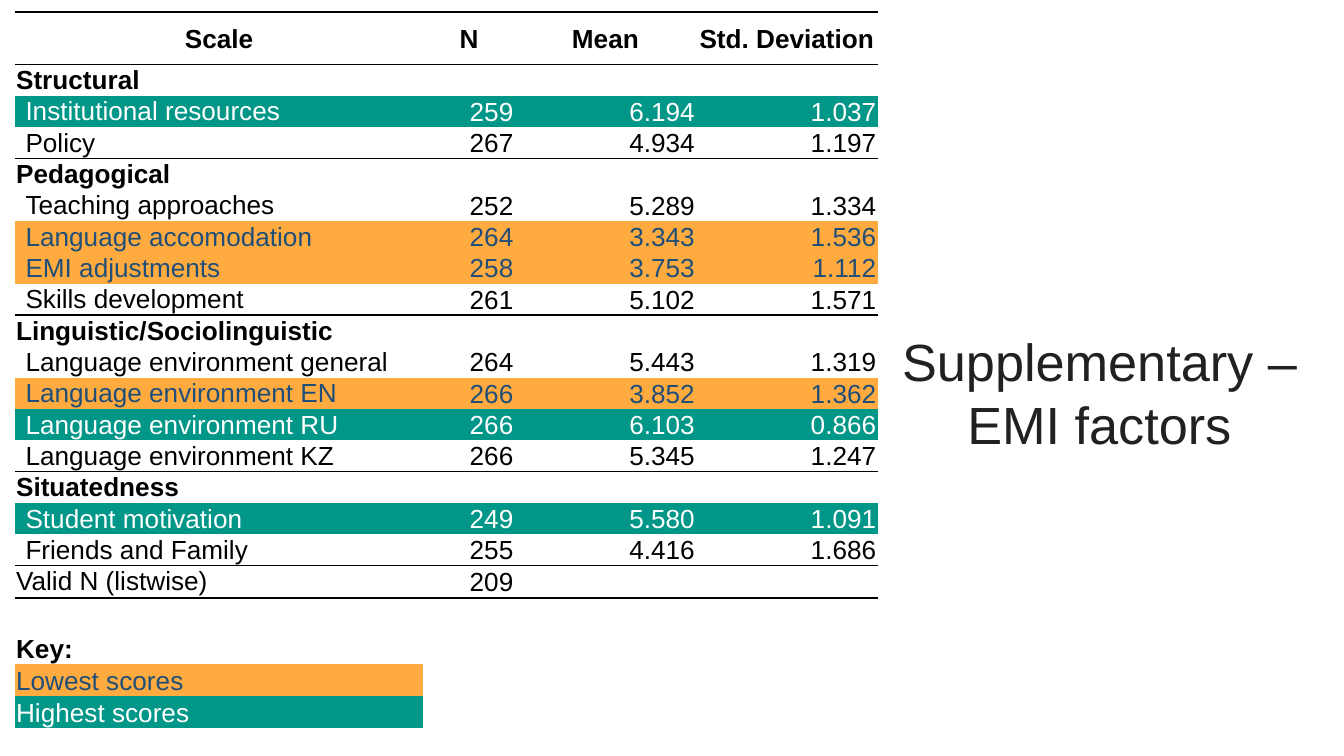
from lxml import etree
from pptx import Presentation
from pptx.dml.color import RGBColor
from pptx.enum.text import MSO_ANCHOR, PP_ALIGN
from pptx.oxml.ns import qn
from pptx.util import Inches, Pt

TOP, MIDDLE, BOTTOM = MSO_ANCHOR.TOP, MSO_ANCHOR.MIDDLE, MSO_ANCHOR.BOTTOM
LEFT, CENTER, RIGHT = PP_ALIGN.LEFT, PP_ALIGN.CENTER, PP_ALIGN.RIGHT
FONT = "Arial"
NO_STYLE = "{2D5ABB26-0587-4C30-8999-92F81FD0307C}"
COLORS = {
    "white": "FFFFFF",
    "black": "000000",
    "title": "212121",
    "navy": "1F4E78",
    "orange": "FFAB40",
    "teal": "009688",
}
TONES = {
    "plain": ("black", None),
    "high": ("white", "teal"),
    "low": ("navy", "orange"),
}
ROWS = [
    ("head", "plain", ["Scale", "N", "Mean", "Std. Deviation"]),
    ("group", "plain", ["Structural"]),
    ("item", "high", ["Institutional resources", "259", "6.194", "1.037"]),
    ("item", "plain", ["Policy", "267", "4.934", "1.197"]),
    ("group", "plain", ["Pedagogical"]),
    ("item", "plain", ["Teaching approaches", "252", "5.289", "1.334"]),
    ("item", "low", ["Language accomodation", "264", "3.343", "1.536"]),
    ("item", "low", ["EMI adjustments", "258", "3.753", "1.112"]),
    ("item", "plain", ["Skills development", "261", "5.102", "1.571"]),
    ("group", "plain", ["Linguistic/Sociolinguistic"]),
    ("item", "plain", ["Language environment general", "264", "5.443", "1.319"]),
    ("item", "low", ["Language environment EN", "266", "3.852", "1.362"]),
    ("item", "high", ["Language environment RU", "266", "6.103", "0.866"]),
    ("item", "plain", ["Language environment KZ", "266", "5.345", "1.247"]),
    ("group", "plain", ["Situatedness"]),
    ("item", "high", ["Student motivation", "249", "5.580", "1.091"]),
    ("item", "plain", ["Friends and Family", "255", "4.416", "1.686"]),
    ("total", "plain", ["Valid N (listwise)", "209"]),
    ("gap", "plain", []),
    ("key title", "plain", ["Key:"]),
    ("key", "low", ["Lowest scores"]),
    ("key", "high", ["Highest scores"]),
]
COLUMN_WIDTHS = [3.04, 0.68, 1.35, 1.35]
BODY_HEIGHT = 3.73 / 16
ROW_HEIGHTS = {"head": 0.39, "total": 0.24, "gap": 0.25, "key title": 0.24, "key": 0.24}
RULES_BELOW = {-1: 1, 0: 1, 3: 0.75, 8: 0.75, 13: 0.75, 16: 1, 17: 1}
BOLD_KINDS = ("head", "group", "key title")


def add_rule(cell, side, width):
    line = etree.SubElement(cell._tc.get_or_add_tcPr(), qn(f"a:{side}"), w=str(Pt(width)))
    if width:
        fill = etree.SubElement(line, qn("a:solidFill"))
        etree.SubElement(fill, qn("a:srgbClr"), val=COLORS["black"])
    else:
        etree.SubElement(line, qn("a:noFill"))


def format_font(font, size, color, bold):
    values = {"name": FONT, "size": Pt(size), "bold": bold}
    for name, value in values.items():
        setattr(font, name, value)
    font.color.rgb = RGBColor.from_string(COLORS[color])


deck = Presentation()
deck.slide_width, deck.slide_height = Inches(10), Inches(10 * 9 / 16)
page = deck.slides.add_slide(deck.slide_layouts[5])
page.background.fill.solid()
page.background.fill.fore_color.rgb = RGBColor.from_string(COLORS["white"])

title = page.shapes.title
title_place = {"left": 6.47, "top": 1.42, "width": 3.42, "height": 2.79}
for name, value in title_place.items():
    setattr(title, name, Inches(value))
frame = title.text_frame
frame.text = "Supplementary – EMI factors"
frame.word_wrap = True
frame.vertical_anchor = TOP
title_margins = {"left": 0.1, "right": 0.1, "top": 1.03, "bottom": 0.1}
for side, value in title_margins.items():
    setattr(frame, f"margin_{side}", Inches(value))
para = frame.paragraphs[0]
para.alignment = CENTER
format_font(para.runs[0].font, 28, "title", False)

heights = [ROW_HEIGHTS.get(kind, BODY_HEIGHT) for kind, tone, texts in ROWS]
table_frame = page.shapes.add_table(
    len(ROWS), len(COLUMN_WIDTHS), Inches(0.11), Inches(0.09),
    Inches(sum(COLUMN_WIDTHS)), Inches(sum(heights)))
table = table_frame.table
table.first_row = False
table.horz_banding = False
table._tbl.tblPr.find(qn("a:tableStyleId")).text = NO_STYLE
for column, width in zip(table.columns, COLUMN_WIDTHS):
    column.width = Inches(width)

for index, (kind, tone, texts) in enumerate(ROWS):
    table.rows[index].height = Inches(heights[index])
    text_color, fill_color = TONES[tone]
    for position in range(len(COLUMN_WIDTHS)):
        cell = table.cell(index, position)
        is_label = position == 0
        margins = {
            "left": 0.08 if kind == "item" and is_label else 0.01,
            "right": 0.01,
            "top": 0.01,
            "bottom": 0,
        }
        for side, value in margins.items():
            setattr(cell, f"margin_{side}", Inches(value))
        if kind.startswith("key"):
            cell.vertical_anchor = BOTTOM
        elif kind == "head" or not is_label:
            cell.vertical_anchor = MIDDLE
        else:
            cell.vertical_anchor = TOP

        for side, rule in (("lnT", index - 1), ("lnB", index)):
            add_rule(cell, side, RULES_BELOW.get(rule, 0))
        if fill_color and (kind != "key" or is_label):
            cell.fill.solid()
            cell.fill.fore_color.rgb = RGBColor.from_string(COLORS[fill_color])
        else:
            cell.fill.background()

        para = cell.text_frame.paragraphs[0]
        if position < len(texts):
            span = para.add_run()
            span.text = texts[position]
            format_font(span.font, 14, text_color, kind in BOLD_KINDS)
            para.alignment = CENTER if kind == "head" else LEFT if is_label else RIGHT
        else:
            end = etree.SubElement(para._p, qn("a:endParaRPr"), sz="1400")
            etree.SubElement(end, qn("a:latin"), typeface=FONT)

deck.save("out.pptx")
